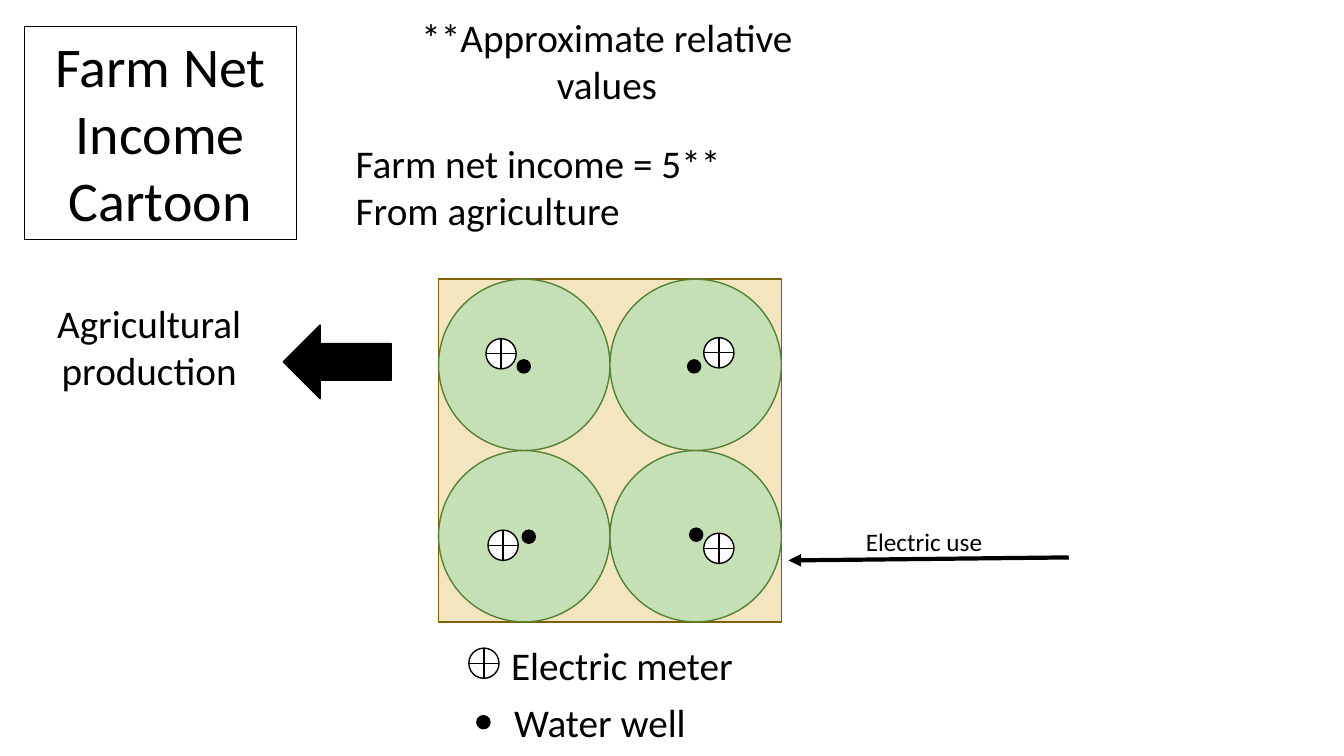
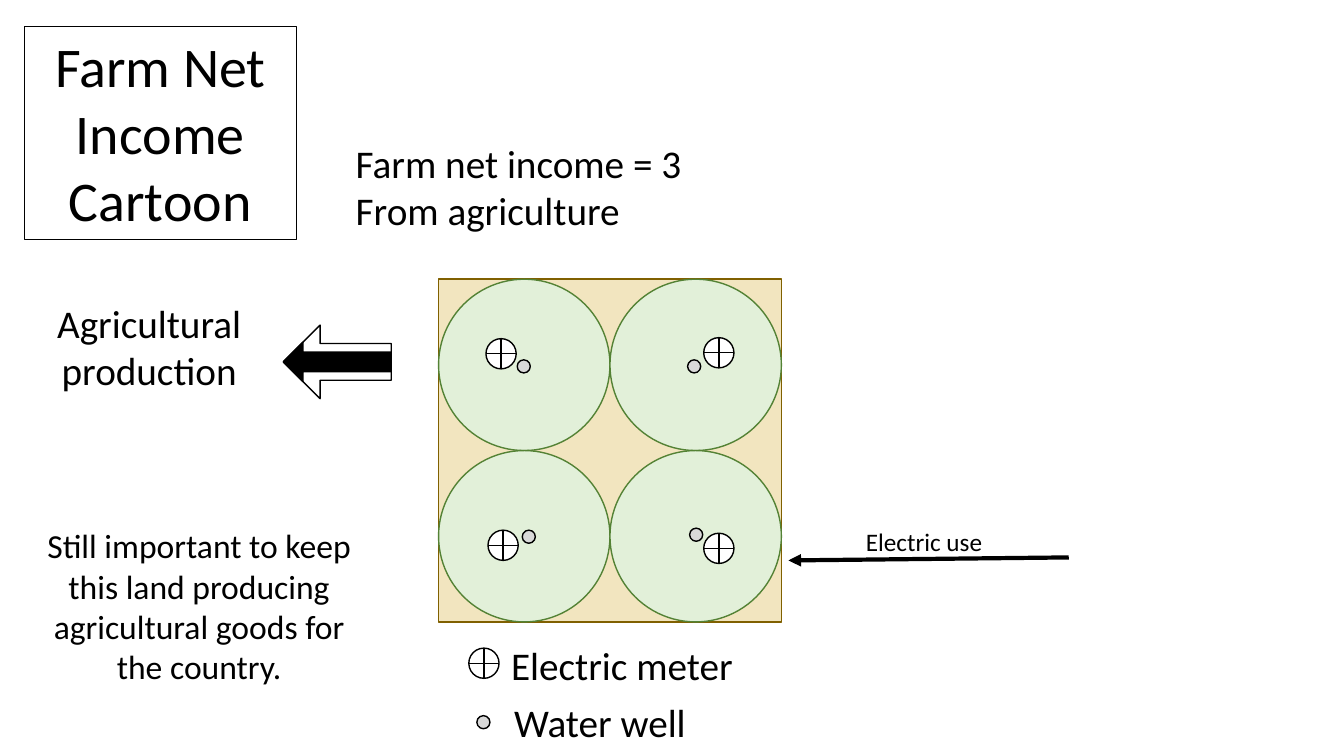
from dataclasses import dataclass
from itertools import product

from lxml.etree import SubElement
from pptx import Presentation
from pptx.dml.color import RGBColor
from pptx.enum.shapes import MSO_CONNECTOR as Connector, MSO_SHAPE as Shape
from pptx.enum.text import MSO_AUTO_SIZE as AutoSize, PP_ALIGN as Align
from pptx.oxml.ns import qn
from pptx.util import Inches, Pt


@dataclass(frozen=True)
class Theme:
    font: str = "Calibri"
    ink: str = "000000"
    paper: str = "FFFFFF"
    soil: str = "CC9900"
    soil_edge: str = "806000"
    crop: str = "C5E0B4"
    pale_crop: str = "E2F0D9"
    crop_edge: str = "548235"
    dry_well: str = "D9D9D9"
    title_size: int = 40
    body_size: int = 28
    note_size: int = 24
    label_size: int = 18


THEME = Theme()
FIELD_LEFT, FIELD_TOP, CIRCLE = 4.35, 2.77, 1.7
METER, WELL = 0.3, 0.13
METERS = [(4.82, 3.36), (6.98, 3.35), (4.84, 5.26), (6.98, 5.29)]
WELLS = [(5.13, 3.57), (6.82, 3.57), (5.18, 5.26), (6.84, 5.24)]
LEGEND_METER, LEGEND_WELL = (4.65, 6.43), (4.73, 7.1)


def write(frame, text, size=THEME.body_size, color=THEME.ink, align=Align.LEFT, wrap=True):
    frame.word_wrap = wrap
    frame.auto_size = AutoSize.SHAPE_TO_FIT_TEXT
    frame.text = text
    for paragraph in frame.paragraphs:
        paragraph.alignment = align
        font = paragraph.font
        font.name, font.size = THEME.font, Pt(size)
        font.color.rgb = RGBColor.from_string(color)


class FarmDeck:
    """Draws farm cartoon slides in one shared style."""

    def __init__(self, theme):
        self.theme = theme
        self.presentation = Presentation()
        self.presentation.slide_width = Inches(13.33)
        self.presentation.slide_height = Inches(7.5)
        self.slide = None

    def new_slide(self):
        self.slide = self.presentation.slides.add_slide(self.presentation.slide_layouts[6])

    def text(self, text, left, top, width, height, border=None, **style):
        box = self.slide.shapes.add_textbox(*map(Inches, (left, top, width, height)))
        write(box.text_frame, text, **style)
        if border:
            box.line.color.rgb = RGBColor.from_string(self.theme.ink)
            box.line.width = Pt(border)

    def shape(self, kind, left, top, width, height, fill=None, line=None, alpha=None, rotation=0):
        shape = self.slide.shapes.add_shape(kind, *map(Inches, (left, top, width, height)))
        shape.shadow.inherit = False
        shape.rotation = rotation
        if fill:
            shape.fill.solid()
            shape.fill.fore_color.rgb = RGBColor.from_string(fill)
        else:
            shape.fill.background()
        if alpha:
            color = shape.fill._xPr.find(f"{qn('a:solidFill')}/{qn('a:srgbClr')}")
            SubElement(color, qn("a:alpha"), val=str(alpha * 1000))
        shape.line.color.rgb = RGBColor.from_string(line or self.theme.ink)
        shape.line.width = Pt(1)

    def arrow(self, start, end, width):
        connector = self.slide.shapes.add_connector(
            Connector.STRAIGHT, *map(Inches, (*start, *end)))
        connector.line.color.rgb = RGBColor.from_string(self.theme.ink)
        connector.line.width = Pt(width)
        SubElement(connector.line._get_or_add_ln(), qn("a:tailEnd"), type="triangle")
        SubElement(connector._element.spPr, qn("a:effectLst"))

    def field(self, crop, well):
        theme = self.theme
        self.shape(Shape.RECTANGLE, FIELD_LEFT, FIELD_TOP, 2 * CIRCLE, 2 * CIRCLE,
                   fill=theme.soil, line=theme.soil_edge, alpha=25)
        for row, column in product(range(2), repeat=2):
            self.shape(Shape.OVAL, FIELD_LEFT + column * CIRCLE, FIELD_TOP + row * CIRCLE,
                       CIRCLE, CIRCLE, fill=crop, line=theme.crop_edge)
        for left, top in [*WELLS, LEGEND_WELL]:
            self.shape(Shape.OVAL, left, top, WELL, WELL, fill=well)
        for left, top in [*METERS, LEGEND_METER]:
            self.shape(Shape.FLOWCHART_OR, left, top, METER, METER, fill=theme.paper)

    def production_arrow(self, height, fill=None):
        self.shape(Shape.RIGHT_ARROW, 2.81, 3.59 - height / 2, 1.07, height,
                   fill=fill, rotation=180)

    def farm(self, income, crop, well):
        theme = self.theme
        self.new_slide()
        self.field(crop, well)
        self.text("Farm Net Income Cartoon", 0.24, 0.26, 2.7, 2.12, border=0.75,
                  size=theme.title_size, align=Align.CENTER)
        self.text(f"Farm net income = {income}\nFrom agriculture", 3.43, 1.33, 4.59, 1.04)
        self.text("Agricultural production", 0.05, 2.92, 2.86, 1.04, align=Align.CENTER)
        self.text("Electric meter", 4.97, 6.31, 2.42, 0.57, wrap=False)
        self.text("Water well", 5, 6.88, 1.92, 0.57, wrap=False)
        self.arrow((10.6, 5.53), (7.82, 5.56), width=3)
        self.text("Electric use", 8.49, 5.17, 1.37, 0.4, size=theme.label_size, wrap=False)


def main():
    deck = FarmDeck(THEME)

    deck.farm("5**", THEME.crop, THEME.ink)
    deck.production_arrow(0.73, fill=THEME.ink)
    deck.text("**Approximate relative values", 4.05, 0.08, 3.94, 1.04, align=Align.CENTER)

    deck.farm("3", THEME.pale_crop, THEME.dry_well)
    deck.production_arrow(0.39, fill=THEME.ink)
    deck.production_arrow(0.73)
    deck.text("Still important to keep this land producing agricultural goods for the country.",
              0.34, 5.16, 3.27, 1.72, size=THEME.note_size, align=Align.CENTER)

    deck.presentation.save("out.pptx")


if __name__ == "__main__":
    main()
